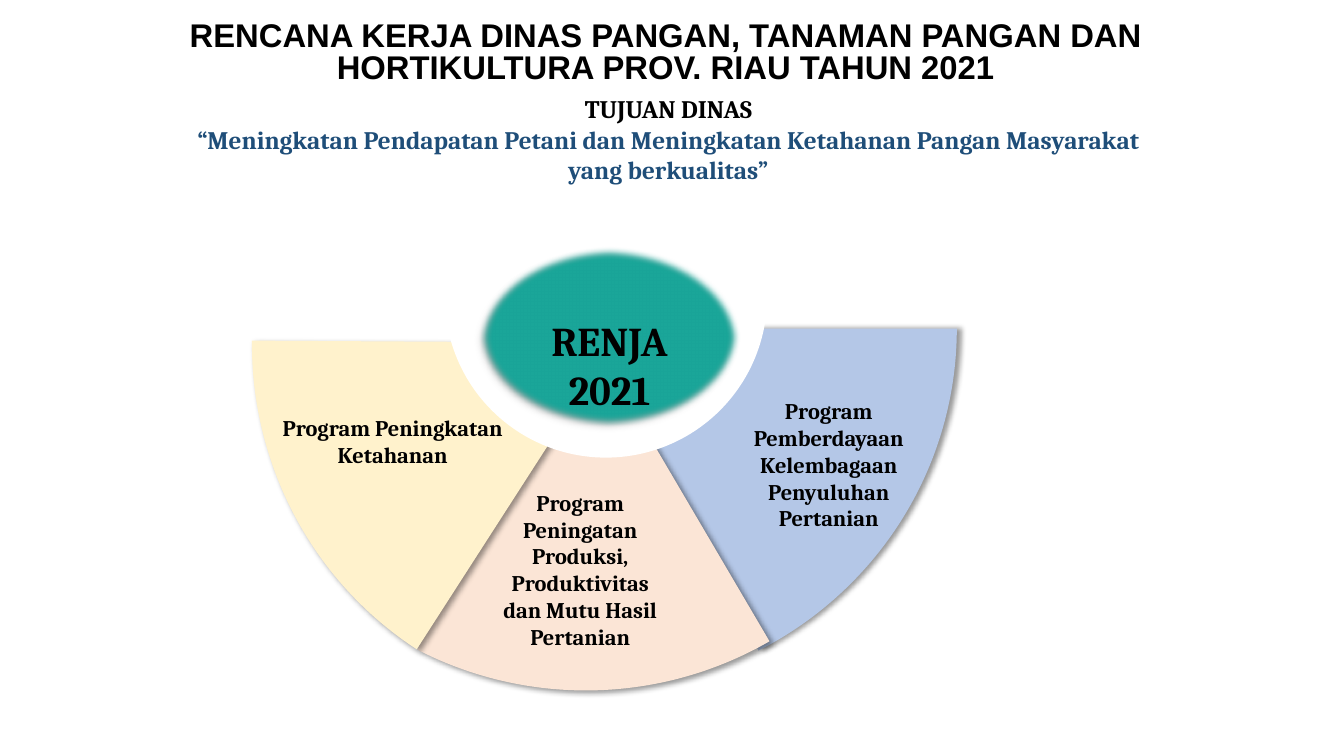
import lxml.etree
import pptx
import pptx.dml.color
import pptx.enum.shapes
import pptx.enum.text
import pptx.oxml.ns
import pptx.util

Inches = pptx.util.Inches
Pt = pptx.util.Pt
SHAPE = pptx.enum.shapes.MSO_SHAPE
ANCHOR = pptx.enum.text.MSO_ANCHOR
qn = pptx.oxml.ns.qn

SECTOR_SIZE = (7.24, 7.18)


def rgb(value):
    return pptx.dml.color.RGBColor.from_string(value)


def place(part, left, top, width, height):
    part.left, part.top = Inches(left), Inches(top)
    part.width, part.height = Inches(width), Inches(height)


def write(frame, lines, size, font="Cambria", anchor=ANCHOR.MIDDLE, spacing=None):
    """Fill a text frame with centred bold lines, given as (text, colour) pairs."""
    frame.word_wrap = True
    frame.auto_size = pptx.enum.text.MSO_AUTO_SIZE.NONE
    frame.vertical_anchor = anchor
    for index, (text, color) in enumerate(lines):
        line = frame.add_paragraph() if index else frame.paragraphs[0]
        line.text = text
        line.alignment = pptx.enum.text.PP_ALIGN.CENTER
        line.line_spacing = spacing
        line.font.name = font
        line.font.size = Pt(size)
        line.font.bold = True
        line.font.color.rgb = rgb(color)


def add_filled(slide, kind, box, fill):
    """Add a preset shape without line or shadow; a fill of None leaves it clear."""
    shape = slide.shapes.add_shape(kind, *map(Inches, box))
    shape.shadow.inherit = False
    shape.line.fill.background()
    if fill:
        shape.fill.solid()
        shape.fill.fore_color.rgb = rgb(fill)
    else:
        shape.fill.background()
    return shape


def add_shadow(shape, direction, soft_edge=0):
    """Cast a shadow towards direction (degrees) and soften the edge (points)."""
    effects = shape._element.spPr.find(qn("a:effectLst"))
    shadow = lxml.etree.SubElement(
        effects, qn("a:outerShdw"), blurRad=str(Pt(4)), dist=str(Pt(3)),
        dir=str(direction * 60000), algn="ctr", rotWithShape="0")
    black = lxml.etree.SubElement(shadow, qn("a:srgbClr"), val="000000")
    lxml.etree.SubElement(black, qn("a:alpha"), val="40000")
    if soft_edge:
        lxml.etree.SubElement(effects, qn("a:softEdge"), rad=str(Pt(soft_edge)))


def add_sector(slide, box, start, end, fill, rotation=0):
    """Add a pie sector between two angles, in degrees clockwise from the right."""
    sector = add_filled(slide, SHAPE.PIE, box, fill)
    sector.adjustments[0] = start * 0.6
    sector.adjustments[1] = end * 0.6
    sector.rotation = rotation
    return sector


def add_heading(slide, left, top, width, height):
    place(slide.shapes.title, left, top, width, height)
    write(slide.shapes.title.text_frame,
          [("RENCANA KERJA DINAS PANGAN, TANAMAN PANGAN DAN "
            "HORTIKULTURA PROV. RIAU TAHUN 2021", "000000")],
          23.4, font="Arial", spacing=0.8)


def add_goal(slide, left, top, width, height):
    goal = slide.shapes.add_textbox(*map(Inches, (left, top, width, height)))
    write(goal.text_frame,
          [("TUJUAN DINAS", "000000"),
           ("“Meningkatan Pendapatan Petani dan Meningkatan Ketahanan Pangan "
            "Masyarakat yang berkualitas”", "1F4E79")],
          18, anchor=ANCHOR.TOP)


def add_program_fan(slide, left, top):
    """Draw the half ring of programs around the work plan, from its top left corner."""
    sectors = [
        (0.06, 0, 0, 62.63, "B4C7E7", 0, 0),
        (0, 0, 59.57, 117.7, "FBE5D6", 0, 45),
        (0.28, 0.14, 19.96, 77.53, "FFF2CC", 102.8, 45),
    ]
    for dx, dy, start, end, fill, rotation, shadow in sectors:
        sector = add_sector(slide, (left + dx, top + dy, *SECTOR_SIZE),
                            start, end, fill, rotation)
        add_shadow(sector, shadow)
    add_sector(slide, (left + 2.22, top + 1.67, 3.2, 3.2), 0, 179.52, "FFFFFF")

    plan = add_filled(slide, SHAPE.OVAL, (left + 2.56, top + 2.78, 2.59, 1.79), "1AA699")
    add_shadow(plan, 135, soft_edge=5)
    plan.text_frame.margin_top = Inches(0.55)
    plan.text_frame.margin_bottom = 0
    write(plan.text_frame, [("RENJA", "000000"), ("2021", "000000")], 29.2)

    empowerment = slide.shapes.add_textbox(
        *map(Inches, (left + 4.97, top + 4.23, 2.12, 1.43)))
    frame = empowerment.text_frame
    frame.margin_left = frame.margin_right = Inches(0.08)
    frame.margin_top = frame.margin_bottom = Inches(0.04)
    write(frame, [("Program Pemberdayaan Kelembagaan Penyuluhan Pertanian", "000000")],
          16, anchor=ANCHOR.TOP)

    programs = [
        (0.44, 4.23, 2.53, 0.95, "Program Peningkatan Ketahanan"),
        (2.56, 5.11, 2.01, 1.74,
         "Program Peningatan Produksi, Produktivitas dan Mutu Hasil Pertanian"),
    ]
    for dx, dy, width, height, name in programs:
        program = add_filled(slide, SHAPE.ROUNDED_RECTANGLE,
                             (left + dx, top + dy, width, height), None)
        write(program.text_frame, [(name, "000000")], 16)


def main():
    deck = pptx.Presentation()
    deck.slide_width, deck.slide_height = Inches(13.33), Inches(7.5)
    slide = deck.slides.add_slide(deck.slide_layouts.get_by_name("Title Only"))
    add_program_fan(slide, 2.19, -0.33)
    add_goal(slide, 1.78, 0.88, 9.7, 1.04)
    add_heading(slide, 1.71, 0.16, 9.78, 0.75)
    deck.save("out.pptx")


if __name__ == "__main__":
    main()
